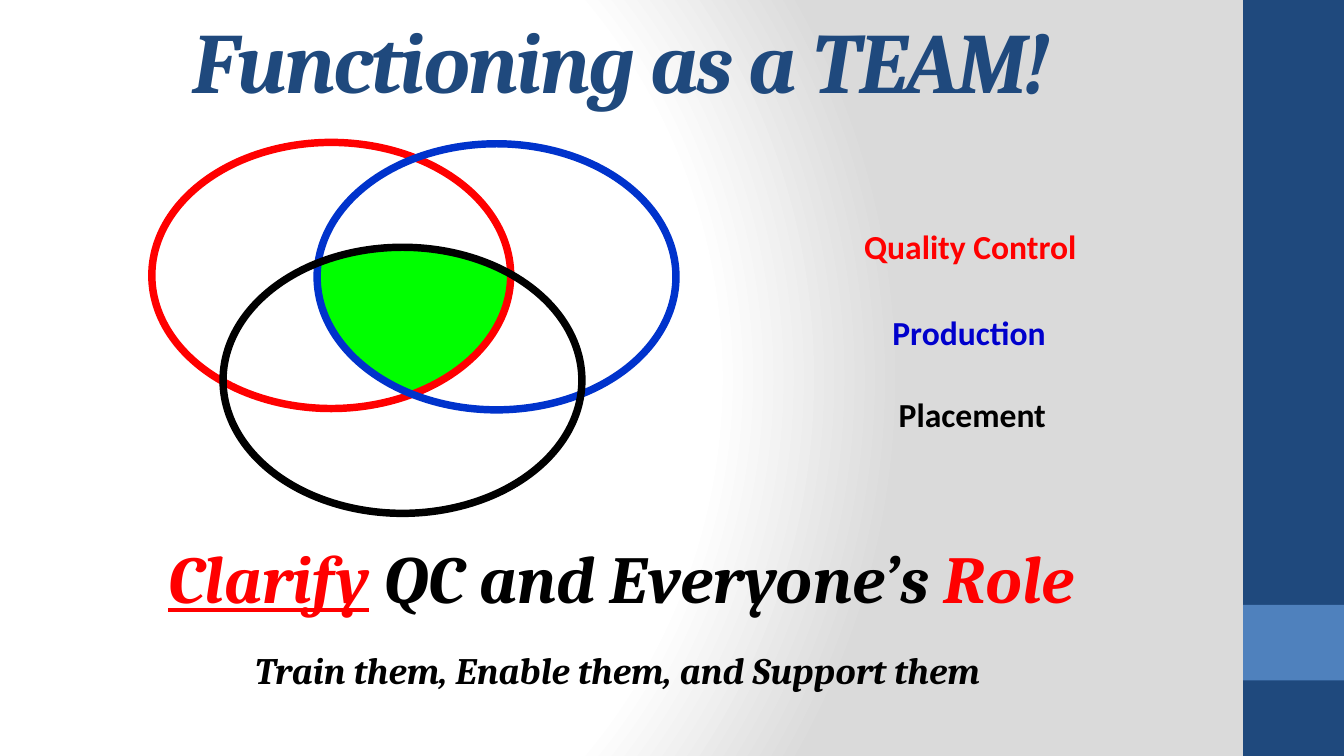
"""Build the teamwork slide: three overlapping roles, their legend and a call to action."""
import dataclasses
import math

import pptx
import pptx.dml.color
import pptx.enum.shapes
import pptx.enum.text
import pptx.oxml
import pptx.oxml.ns
import pptx.util

WIDTH = pptx.util.Inches(10)
HEIGHT = WIDTH * 9 // 16
NAVY, RED, BLUE, BLACK = "1F497D", "FF0000", "0033CC", "000000"
MAIN_WIDTH = 92.5
OVERLAP_STEPS = 120
HEADLINE = {"name": "Cambria", "bold": True, "italic": True}
LEGEND = {"name": "Calibri", "bold": True, "size": pptx.util.Pt(18)}
BACKDROP = f"""<p:bg {pptx.oxml.ns.nsdecls('p', 'a')}><p:bgPr><a:gradFill rotWithShape="1"><a:gsLst>
<a:gs pos="0"><a:srgbClr val="FFFFFF"/></a:gs><a:gs pos="75000"><a:srgbClr val="FFFFFF"/></a:gs>
<a:gs pos="100000"><a:srgbClr val="DADADA"/></a:gs></a:gsLst>
<a:path path="circle"><a:fillToRect l="20000" t="50000" r="100000" b="50000"/></a:path>
</a:gradFill><a:effectLst/></p:bgPr></p:bg>"""


@dataclasses.dataclass(frozen=True)
class Area:
    """A rectangle in percent of the slide's width and height."""
    left: float
    top: float
    width: float
    height: float

    def emu(self) -> tuple:
        """Return the rectangle in slide units."""
        return (round(WIDTH * self.left / 100), round(HEIGHT * self.top / 100),
                round(WIDTH * self.width / 100), round(HEIGHT * self.height / 100))


@dataclasses.dataclass(frozen=True)
class Role:
    """One ring of the diagram."""
    area: Area
    color: str


@dataclasses.dataclass(frozen=True)
class Words:
    """A stretch of text with its own colour."""
    text: str
    color: str
    underline: bool = False


@dataclasses.dataclass(frozen=True)
class Line:
    """A centred line of text in its area."""
    area: Area
    words: tuple
    font: dict
    spacing: int = 0


def ring(left: float, top: float) -> Area:
    """Return the area of a ring of the common size."""
    return Area(left, top, 26.7, 35.2)


def legend(left: float, top: float, width: float, text: str, color: str) -> Line:
    """Return one legend entry."""
    return Line(Area(left, top, width, 7.11), (Words(text, color),), LEGEND)


def headline(top: float, height: float, size: int, *words: Words, spacing: int = 0) -> Line:
    """Return a line that spans the main part of the slide."""
    return Line(Area(0, top, MAIN_WIDTH, height), words,
                {**HEADLINE, "size": pptx.util.Pt(size)}, spacing)


BANDS = ((Area(MAIN_WIDTH, 0, 7.5, 100), NAVY), (Area(MAIN_WIDTH, 80, 7.5, 10), "4F81BD"))
ROLES = (
    Role(ring(11.3, 18.84), RED),
    Role(ring(23.6, 19.02), BLUE),
    Role(ring(16.6, 32.71), BLACK),
)
LINES = (
    headline(0, 15.64, 46, Words("Functioning as a TEAM!", NAVY), spacing=-100),
    legend(59.3, 28.98, 25.8, "Quality Control", RED),
    legend(64.2, 40.36, 15.8, "Production", "0000CC"),
    legend(63.6, 51.2, 17.5, "Placement", BLACK),
    headline(70.76, 11.02, 36, Words("Clarify", RED, True), Words(" ", RED),
             Words("QC and Everyone’s ", BLACK), Words("Role", RED)),
    headline(84.09, 8.89, 20, Words("Train them, Enable them, and Support them ", BLACK)),
)


def rgb(color: str) -> pptx.dml.color.RGBColor:
    """Turn a hex string into a colour."""
    return pptx.dml.color.RGBColor.from_string(color)


def paint(shape, fill: str = "", line: str = "", weight: float = 0) -> None:
    """Set fill and outline, leaving out those without a colour."""
    shape.shadow.inherit = False
    for target, color in ((shape.fill, fill), (shape.line.fill, line)):
        if color:
            target.solid()
            target.fore_color.rgb = rgb(color)
        else:
            target.background()
    if line:
        shape.line.width = pptx.util.Pt(weight)


def add_preset(slide, kind, area: Area):
    """Add a preset shape in its area."""
    return slide.shapes.add_shape(kind, *area.emu())


def reach(area: Area, x: float, y: float, angle: float) -> float:
    """Return the distance from an inner point to the ellipse along an angle."""
    left, top, width, height = area.emu()
    a, b = width / 2, height / 2
    px, py = (x - left - a) / a, (y - top - b) / b
    dx, dy = math.cos(angle) / a, math.sin(angle) / b
    square, half, rest = dx * dx + dy * dy, px * dx + py * dy, px * px + py * py - 1
    return (math.sqrt(half * half - square * rest) - half) / square


def add_overlap(slide, roles: tuple) -> None:
    """Fill the region that all rings share."""
    x, y = WIDTH * 0.308, HEIGHT * 0.42
    outline = []
    for step in range(OVERLAP_STEPS):
        angle = math.tau * step / OVERLAP_STEPS
        distance = min(reach(role.area, x, y, angle) for role in roles)
        outline.append((round(x + distance * math.cos(angle)), round(y + distance * math.sin(angle))))
    builder = slide.shapes.build_freeform(*outline[0])
    builder.add_line_segments(outline[1:], close=True)
    paint(builder.convert_to_shape(), "00FF00", BLACK, 0.75)


def add_line(slide, line: Line) -> None:
    """Add a centred line of text."""
    frame = slide.shapes.add_textbox(*line.area.emu()).text_frame
    frame.word_wrap = True
    frame.vertical_anchor = pptx.enum.text.MSO_ANCHOR.MIDDLE
    paragraph = frame.paragraphs[0]
    paragraph.alignment = pptx.enum.text.PP_ALIGN.CENTER
    for words in line.words:
        run = paragraph.add_run()
        run.text = words.text
        for attribute, value in {**line.font, "underline": words.underline}.items():
            setattr(run.font, attribute, value)
        run.font.color.rgb = rgb(words.color)
        if line.spacing:
            run.font._element.set("spc", str(line.spacing))


def main() -> None:
    """Assemble and save the slide."""
    deck = pptx.Presentation()
    deck.slide_width, deck.slide_height = WIDTH, HEIGHT
    slide = deck.slides.add_slide(deck.slide_layouts[6])
    slide._element.cSld.insert(0, pptx.oxml.parse_xml(BACKDROP))
    for area, color in BANDS:
        paint(add_preset(slide, pptx.enum.shapes.MSO_SHAPE.RECTANGLE, area), color)
    add_overlap(slide, ROLES)
    for role in ROLES:
        paint(add_preset(slide, pptx.enum.shapes.MSO_SHAPE.OVAL, role.area), line=role.color, weight=4)
    for line in LINES:
        add_line(slide, line)
    deck.save("out.pptx")


if __name__ == "__main__":
    main()
